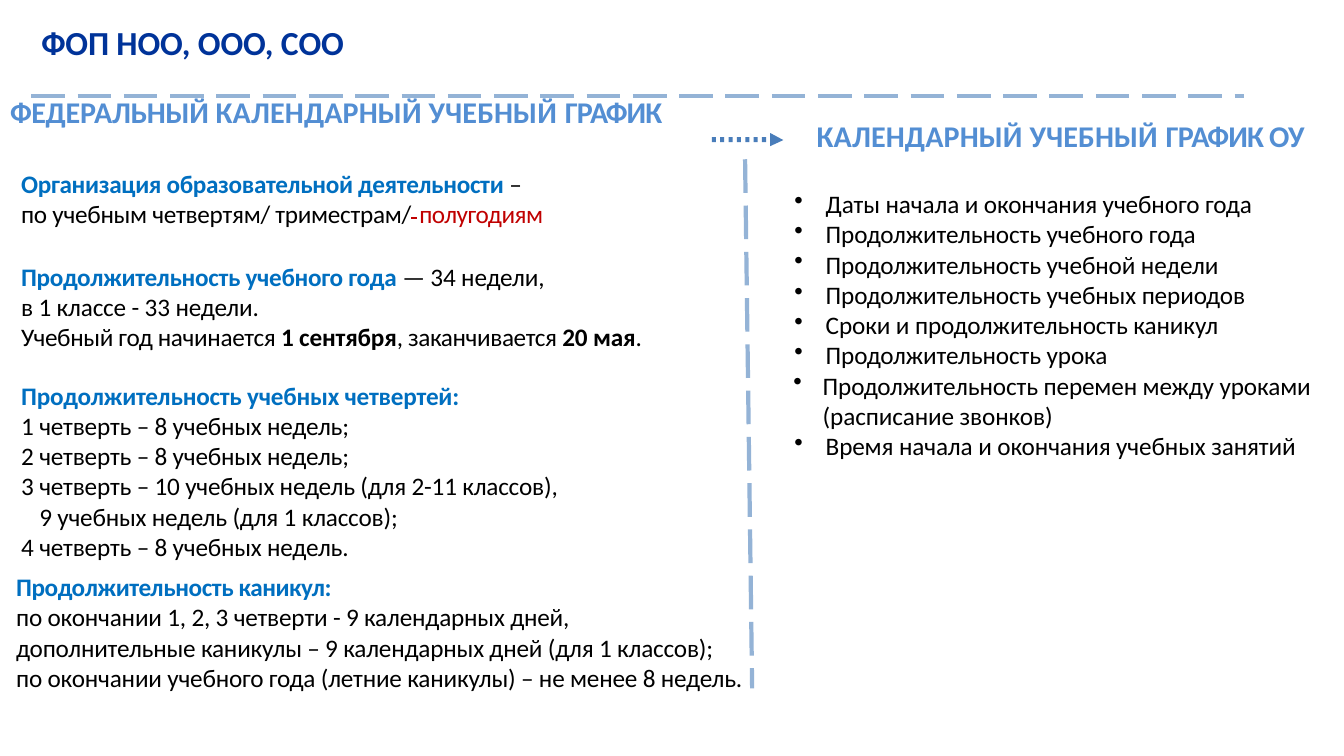
from lxml import etree
from pptx import Presentation
from pptx.dml.color import RGBColor
from pptx.enum.dml import MSO_LINE_DASH_STYLE as Dash
from pptx.enum.shapes import MSO_CONNECTOR as Connector
from pptx.oxml.ns import qn
from pptx.util import Inches, Pt

COLORS = {"navy": "003399", "heading": "538ED3", "topic": "006FC0", "body": "000000",
          "red": "C00000", "dash": "94B3D6", "arrow": "497DBA"}

# Run styles: size, colour, bold
STYLES = {
    "title": (24, "navy", True),
    "heading": (21.5, "heading", True),
    "topic": (18, "topic", True),
    "body": (18, "body", False),
    "strong": (18, "body", True),
    "red": (18, "red", False),
    "struck": (18, "red", False),
}

# Paragraph kinds: left margin, first-line indent, list mark
KINDS = {
    "plain": (0.01, 0, None),
    "bullet": (0.33, -0.31, ("a:buChar", "char", "•")),
    "wrapped": (0.3, -0.29, ("a:buChar", "char", "•")),
    "number": (0.19, -0.18, ("a:buAutoNum", "type", "arabicPlain")),
}

presentation = Presentation()
presentation.slide_width, presentation.slide_height = Inches(13.33), Inches(7.5)
slide = presentation.slides.add_slide(presentation.slide_layouts[6])


def add_text(left, top, width, height, paragraphs):
    """Each paragraph is a kind and its runs: style, letter spacing in points, text."""
    frame = slide.shapes.add_textbox(*map(Inches, (left, top, width, height))).text_frame
    frame.word_wrap = True
    margins = {"margin_left": 0, "margin_right": 0, "margin_top": Inches(0.01), "margin_bottom": 0}
    for name, value in margins.items():
        setattr(frame, name, value)
    for index, (kind, runs) in enumerate(paragraphs):
        paragraph = frame.add_paragraph() if index else frame.paragraphs[0]
        paragraph.space_before = Pt(0 if index else 1)
        margin, indent, mark = KINDS[kind]
        properties = paragraph._p.get_or_add_pPr()
        properties.set("marL", str(Inches(margin)))
        properties.set("indent", str(Inches(indent)))
        if mark:
            tag, attribute, value = mark
            etree.SubElement(properties, qn(tag)).set(attribute, value)
        for style, spacing, text in runs:
            size, color, bold = STYLES[style]
            for number, line in enumerate(text.split("\n")):
                if number:
                    paragraph.add_line_break()
                if not line:
                    continue
                run = paragraph.add_run()
                run.text = line
                values = {"name": "Calibri", "size": Pt(size), "bold": bold}
                for name, value in values.items():
                    setattr(run.font, name, value)
                run.font.color.rgb = RGBColor.from_string(COLORS[color])
                run_properties = run._r.get_or_add_rPr()
                run_properties.set("spc", str(round(spacing * 100)))
                if style == "struck":
                    run_properties.set("strike", "sngStrike")


# Title and column headings
add_text(0.4, 0.21, 10.14, 0.43, [("plain", [("title", -0.1, "ФОП НОО, ООО, СОО")])])
add_text(0.09, 0.92, 6.96, 0.74, [("plain", [
    ("heading", -0.2, "ФЕДЕРАЛЬНЫЙ "), ("heading", 0.1, "КАЛЕНДАРНЫЙ УЧЕБНЫЙ "),
    ("heading", -0.7, "ГРАФИК")])])
add_text(8.09, 1.16, 4.9, 0.39, [("plain", [
    ("heading", 0.1, "КАЛЕНДАРНЫЙ УЧЕБНЫЙ "), ("heading", -0.6, "ГРАФИК ОУ")])])

# Dotted arrow between the headings: seven squares and a head
squares = [[(x, 1.36), (x + 0.04, 1.36), (x + 0.04, 1.41), (x, 1.41)]
           for x in (7.06 + 0.083 * step for step in range(7))]
head = [(7.64, 1.32), (7.77, 1.39), (7.64, 1.45)]
builder = slide.shapes.build_freeform(Inches(7.06), Inches(1.36))
for outline in squares + [head]:
    points = [(Inches(x), Inches(y)) for x, y in outline]
    builder.move_to(*points[0])
    builder.add_line_segments(points[1:], close=True)
arrow = builder.convert_to_shape()
arrow.shadow.inherit = False
arrow.fill.solid()
arrow.fill.fore_color.rgb = RGBColor.from_string(COLORS["arrow"])
arrow.line.fill.background()

# Dashed rules
for ends in [(0.31, 0.95, 12.34, 0.95), (7.39, 1.58, 7.46, 6.83)]:
    rule = slide.shapes.add_connector(Connector.STRAIGHT, *map(Inches, ends))
    rule.line.color.rgb = RGBColor.from_string(COLORS["dash"])
    rule.line.width = Pt(3)
    rule.line.dash_style = Dash.LONG_DASH
    etree.SubElement(rule._element.spPr, qn("a:effectLst"))

# Right column: contents of the school calendar
contents = [
    ("bullet", "Даты начала и окончания учебного года"),
    ("bullet", "Продолжительность учебного года"),
    ("bullet", "Продолжительность учебной недели"),
    ("bullet", "Продолжительность учебных периодов"),
    ("bullet", "Сроки и продолжительность каникул"),
    ("bullet", "Продолжительность урока"),
    ("wrapped", "Продолжительность перемен между уроками\n(расписание звонков)"),
    ("bullet", "Время начала и окончания учебных занятий"),
]
add_text(7.86, 1.86, 5.24, 2.73, [(kind, [("body", -0.08, text)]) for kind, text in contents])

# Left column: federal calendar
add_text(0.2, 1.66, 5.21, 1.24, [("plain", [
    ("topic", -0.23, "Организация образовательной деятельности "),
    ("body", -0.2, "–\nпо учебным четвертям/ триместрам/"),
    ("struck", 1.6, " "), ("red", -0.3, "полугодиям")])])

add_text(0.2, 2.58, 6.27, 0.93, [
    ("plain", [("topic", -0.22, "Продолжительность учебного года "),
               ("body", -0.1, "— 34 недели,")]),
    ("plain", [("body", -0.1, "в 1 классе - 33 недели.")]),
    ("plain", [("body", -0.25, "Учебный год начинается "), ("strong", -0.1, "1 сентября"),
               ("body", -0.27, ", заканчивается "), ("strong", -0.15, "20 мая"),
               ("body", -0.2, ".")]),
])

quarters = [
    "четверть – 8 учебных недель;",
    "четверть – 8 учебных недель;",
    "четверть – 10 учебных недель (для 2-11 классов),\n9 учебных недель (для 1 классов);",
    "четверть – 8 учебных недель.",
]
add_text(0.2, 3.76, 5.39, 1.83,
         [("plain", [("topic", -0.17, "Продолжительность учебных четвертей:")])]
         + [("number", [("body", -0.15, text)]) for text in quarters])

add_text(0.15, 5.66, 7.28, 1.23, [
    ("plain", [("topic", -0.3, "Продолжительность каникул:")]),
    ("plain", [("body", -0.14, "по окончании 1, 2, 3 четверти - 9 календарных дней,\n"
                               "дополнительные каникулы – 9 календарных дней (для 1 классов);\n"
                               "по окончании учебного года (летние каникулы) – "
                               "не менее 8 недель.")]),
])

presentation.save("out.pptx")
